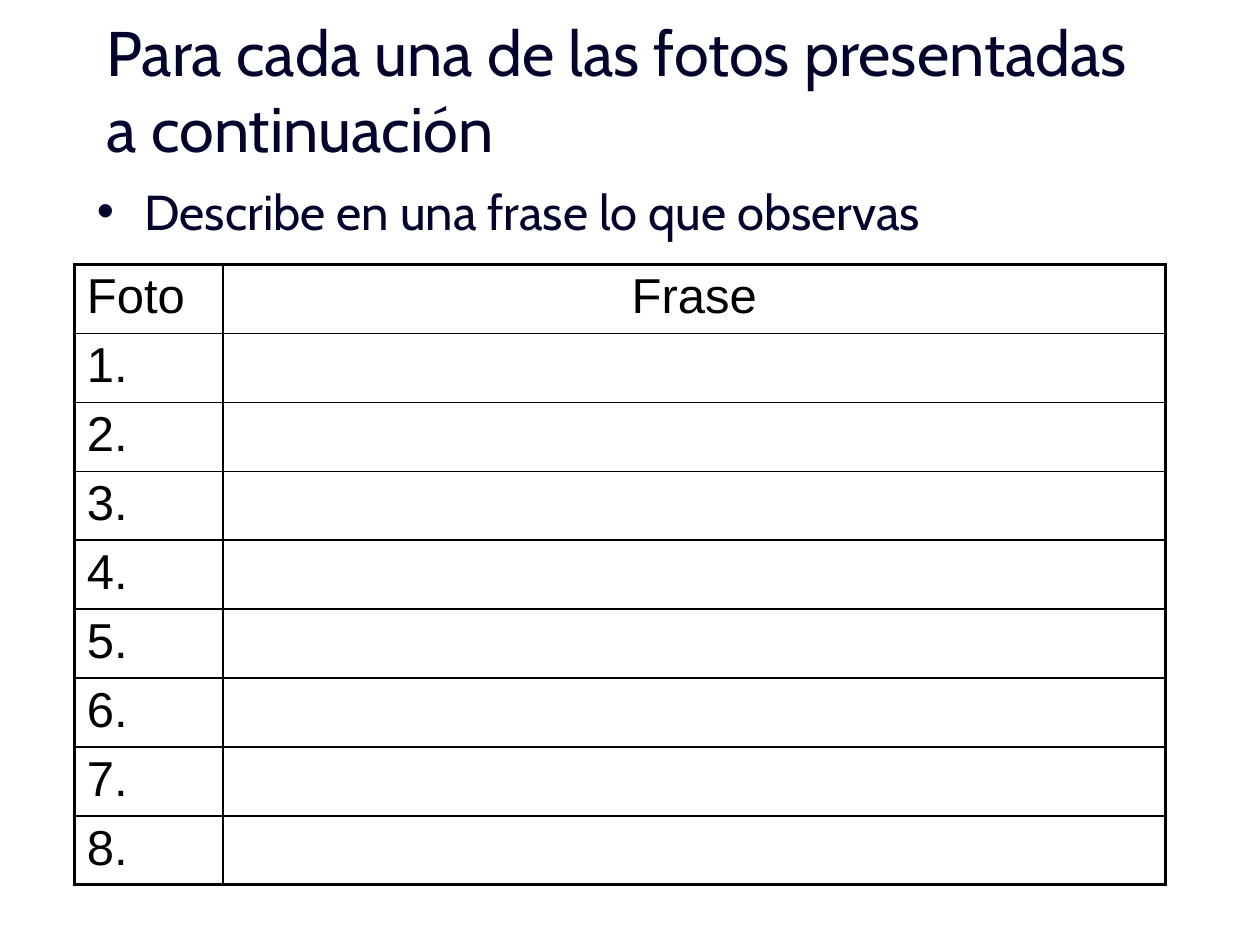
from dataclasses import dataclass

from lxml.etree import SubElement
from pptx import Presentation
from pptx.dml.color import RGBColor
from pptx.enum.text import MSO_ANCHOR, PP_ALIGN
from pptx.oxml.ns import qn
from pptx.util import Inches, Pt

TITLE = "Para cada una de las fotos presentadas a continuación"
TASK = "Describe en una frase lo que observas"
HEADER = ("Foto", "Frase")
ROWS = [HEADER] + [(f"{n}.", "") for n in range(1, 9)]
COL_WIDTHS = (1.18, 7.48)
ROW_HEIGHT = 0.53


@dataclass(frozen=True)
class Theme:
    ink: str = "03042B"
    table_ink: str = "000000"
    paper: str = "FFFFFF"
    text_font: str = "Cabin"
    table_font: str = "Arial"
    title_size: float = 36
    body_size: float = 28
    outer_line: float = 2.25
    inner_line: float = 1


THEME = Theme()


def add_run(p, text, font, size, color):
    r = p.add_run()
    r.text = text
    r.font.name = font
    r.font.size = Pt(size)
    r.font.color.rgb = RGBColor.from_string(color)


def add_text(slide, box, text, size, anchor):
    tf = slide.shapes.add_textbox(*map(Inches, box)).text_frame
    tf.word_wrap = True
    tf.vertical_anchor = anchor
    p = tf.paragraphs[0]
    add_run(p, text, THEME.text_font, size, THEME.ink)
    return p


def add_bullet(p, indent):
    pPr = p._p.get_or_add_pPr()
    pPr.set("marL", str(Inches(indent)))
    pPr.set("indent", str(-Inches(indent)))
    SubElement(pPr, qn("a:buFont"), typeface="Arial")
    SubElement(pPr, qn("a:buChar"), char="•")


def set_borders(cell, outer_sides):
    """Draw all four borders, thicker where the side is on the table's edge."""
    tcPr = cell._tc.get_or_add_tcPr()
    for side, is_outer in outer_sides.items():
        width = THEME.outer_line if is_outer else THEME.inner_line
        ln = SubElement(tcPr, qn(f"a:ln{side}"), w=str(Pt(width)))
        fill = SubElement(ln, qn("a:solidFill"))
        SubElement(fill, qn("a:srgbClr"), val=THEME.table_ink)


def add_photo_table(slide, left, top):
    n_rows, n_cols = len(ROWS), len(COL_WIDTHS)
    table = slide.shapes.add_table(
        n_rows, n_cols, Inches(left), Inches(top),
        Inches(sum(COL_WIDTHS)), Inches(ROW_HEIGHT * n_rows)).table
    table.first_row = table.horz_banding = False
    for column, width in zip(table.columns, COL_WIDTHS):
        column.width = Inches(width)
    for i, row in enumerate(ROWS):
        table.rows[i].height = Inches(ROW_HEIGHT)
        for j, text in enumerate(row):
            cell = table.cell(i, j)
            cell.margin_top = cell.margin_bottom = Inches(0.04)
            set_borders(cell, {"L": j == 0, "R": j == n_cols - 1,
                               "T": i == 0, "B": i == n_rows - 1})
            cell.fill.background()
            p = cell.text_frame.paragraphs[0]
            if j == 1:
                p.alignment = PP_ALIGN.CENTER
            if text:
                add_run(p, text, THEME.table_font, THEME.body_size,
                        THEME.table_ink)


def main():
    prs = Presentation()
    prs.slide_width, prs.slide_height = Inches(10), Inches(7.5)
    slide = prs.slides.add_slide(prs.slide_layouts[6])
    bg = slide.background.fill
    bg.solid()
    bg.fore_color.rgb = RGBColor.from_string(THEME.paper)

    add_text(slide, (0.75, 0, 8.5, 1.42), TITLE, THEME.title_size,
             MSO_ANCHOR.MIDDLE)
    task = add_text(slide, (0.67, 1.39, 8.5, 0.79), TASK, THEME.body_size,
                    MSO_ANCHOR.TOP)
    add_bullet(task, 0.38)
    add_photo_table(slide, 0.59, 2.1)
    prs.save("out.pptx")


if __name__ == "__main__":
    main()
